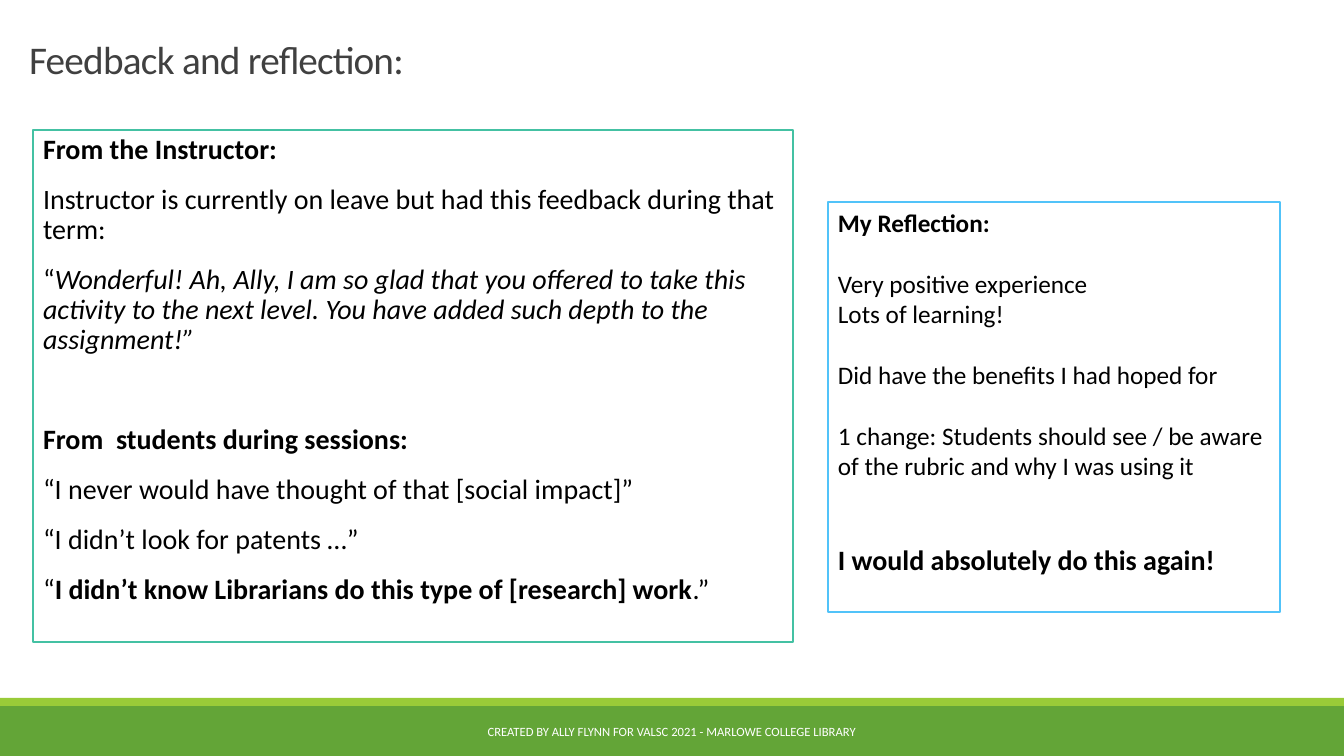
from pptx import Presentation
from pptx import util as u
from pptx.dml.color import RGBColor
from pptx.enum import shapes, text

SCALE = 12192000 / 1344
BOLD = {"bold": True}
ITALIC = {"italic": True}

deck = Presentation()
deck.slide_width = u.Emu(round(1344 * SCALE))
deck.slide_height = u.Emu(round(756 * SCALE))
page = deck.slides.add_slide(deck.slide_layouts[6])


def color(value):
    return RGBColor.from_string(value)


def add_box(area, fill=None, line=None, insets=(10, 5, 10, 5), anchor="TOP",
            paras=(), size=18, ink="000000", layout={}):
    place = [u.Emu(round(px * SCALE)) for px in area]
    if fill:
        box = page.shapes.add_shape(shapes.MSO_SHAPE.RECTANGLE, *place)
        box.shadow.inherit = False
        box.fill.solid()
        box.fill.fore_color.rgb = color(fill)
        if line:
            box.line.color.rgb = color(line)
            box.line.width = u.Pt(1.25)
        else:
            box.line.fill.background()
    else:
        box = page.shapes.add_textbox(*place)
    frame = box.text_frame
    frame.word_wrap = True
    frame.vertical_anchor = text.MSO_ANCHOR[anchor]
    for side, px in zip(("left", "top", "right", "bottom"), insets):
        setattr(frame, f"margin_{side}", u.Emu(round(px * SCALE)))
    for index, (gap, *spans) in enumerate(paras):
        para = frame.add_paragraph() if index else frame.paragraphs[0]
        settings = {"alignment": text.PP_ALIGN.LEFT, "space_before": u.Pt(gap)} | layout
        for name, value in settings.items():
            setattr(para, name, value)
        for words, style in spans:
            span = para.add_run()
            span.text = words
            span.font.color.rgb = color(ink)
            for name, value in ({"name": "Calibri", "size": u.Pt(size)} | style).items():
                setattr(span.font, name, value)
    return box


add_box((0, 706, 1344, 50), fill="63A537")
add_box((0, 698, 1344, 8), fill="99CB38")
add_box(
    (406, 712, 531, 40), anchor="MIDDLE", size=9, ink="FFFFFF",
    layout={"alignment": text.PP_ALIGN.CENTER},
    paras=[(0, ("CREATED BY ALLY FLYNN FOR VALSC 2021 - MARLOWE COLLEGE LIBRARY", {}))],
)

title = add_box(
    (19, 22, 1109, 66), anchor="BOTTOM", size=28, ink="404040",
    layout={"line_spacing": 0.85},
    paras=[(0, ("Feedback and reflection:", {}))],
)
title.text_frame.paragraphs[0].runs[0]._r.get_or_add_rPr().set("spc", "-50")

feedback = [
    (0, ("From the Instructor:", BOLD)),
    (14, ("Instructor is currently on leave but had this feedback during that term:", {})),
    (14, ("“", {}),
     ("Wonderful! Ah, Ally, I am so glad that you offered to take this activity "
      "to the next level. You have added such depth to the assignment!”", ITALIC)),
    (50, ("From  students during sessions:", BOLD)),
    (14, ("“I never would have thought of that [social impact]”", {})),
    (14, ("“I didn’t look for patents …”", {})),
    (14, ("“", {}),
     ("I didn’t know Librarians do this type of [research] work", BOLD),
     (".”", {})),
]
add_box((33, 130, 760, 512), fill="FFFFFF", line="44C1A3", insets=(10, 5, 0, 5),
        size=20, layout={"line_spacing": 0.9}, paras=feedback)

reflection = [
    (0, ("My Reflection:", BOLD)),
    (22, ("Very positive experience", {})),
    (0, ("Lots of learning!", {})),
    (22, ("Did have the benefits I had hoped for", {})),
    (22, ("1 change: Students should see / be aware of the rubric and why I was using it", {})),
    (44, ("I would absolutely do this again!", BOLD | {"size": u.Pt(20)})),
]
add_box((828, 202, 452, 410), fill="FFFFFF", line="51C3F9", paras=reflection)

deck.save("out.pptx")
